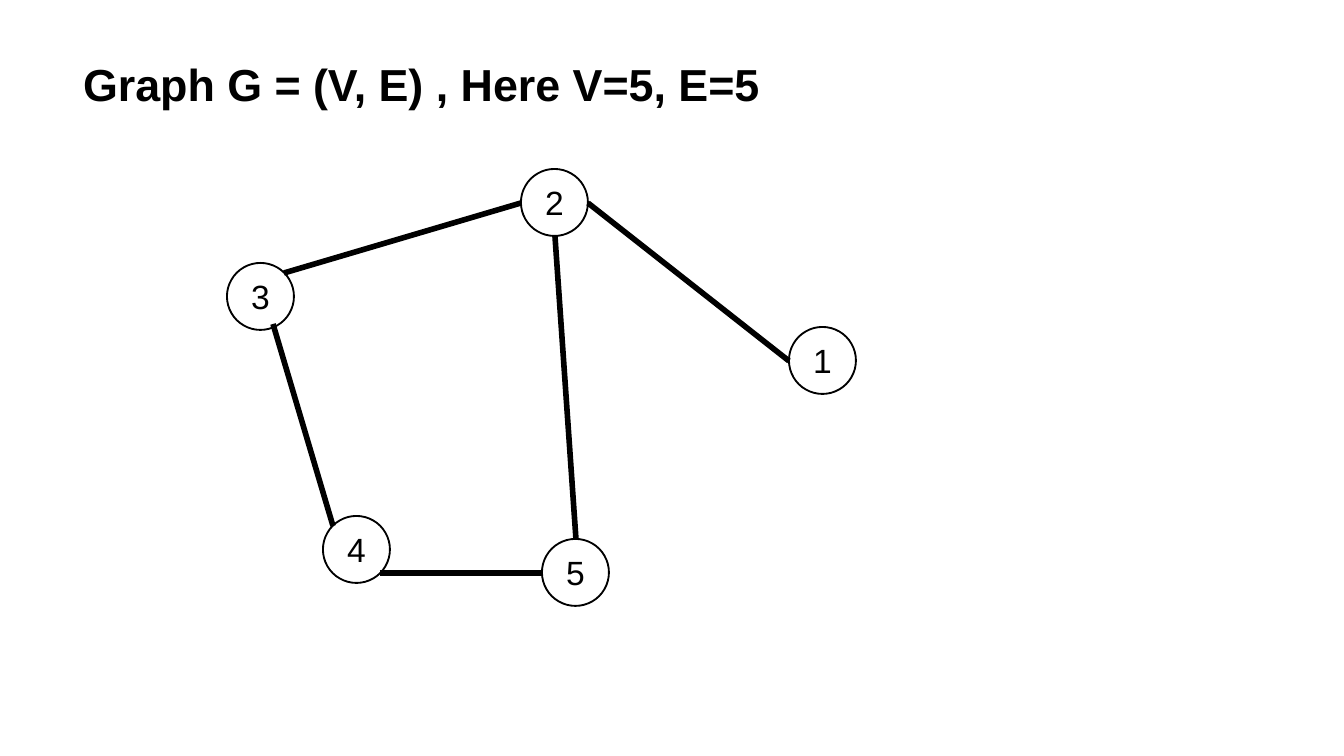
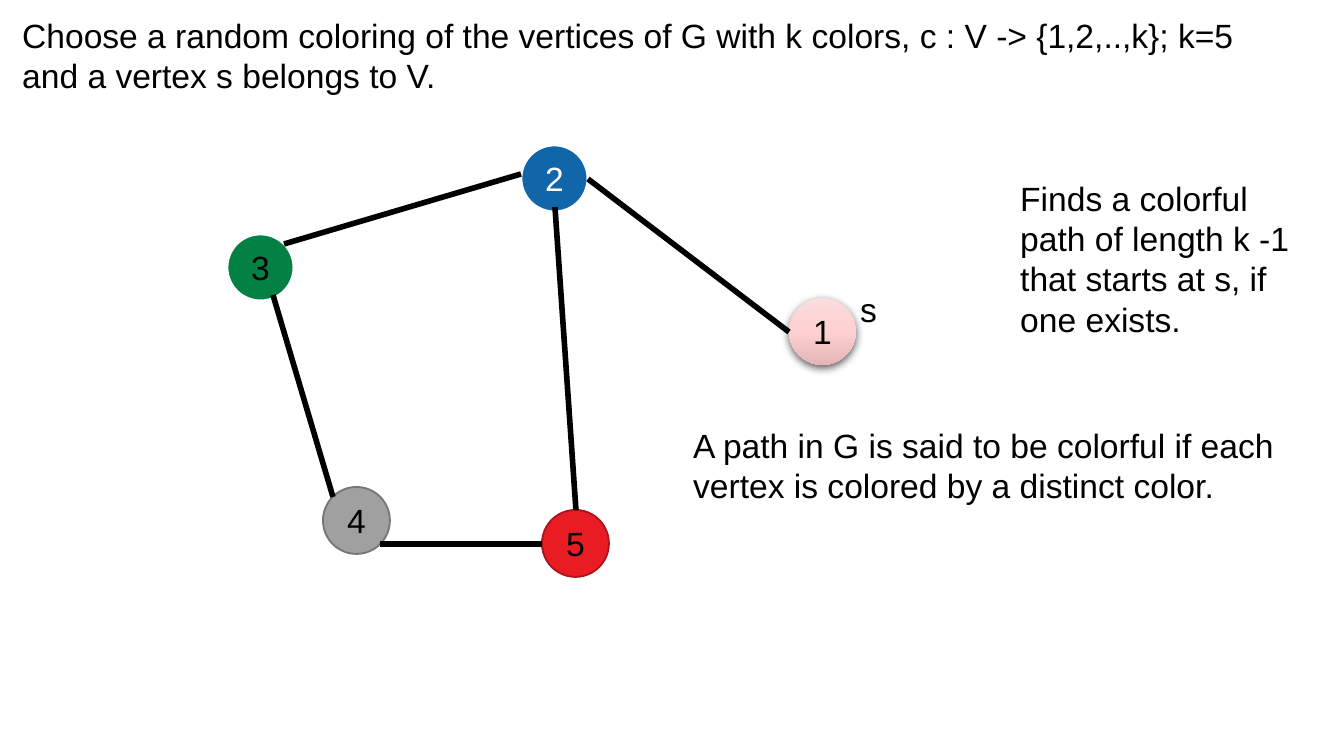
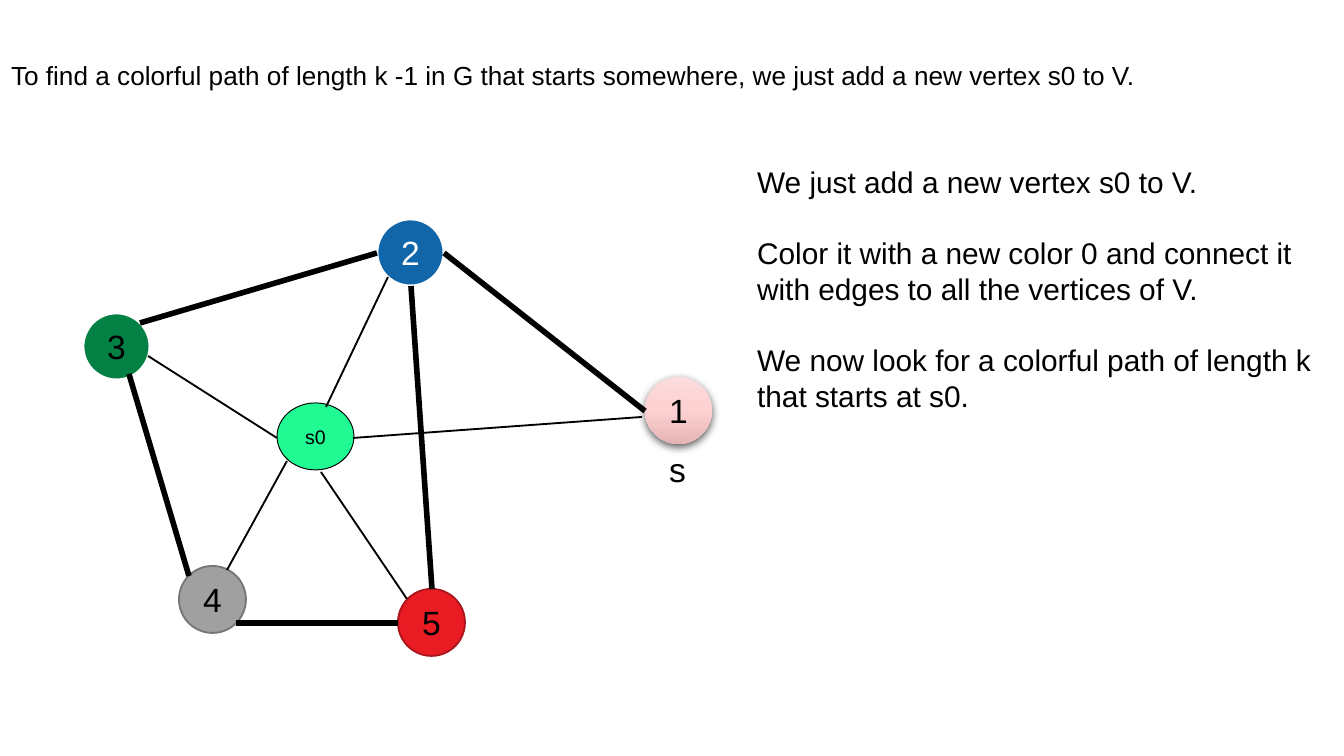
from copy import deepcopy

from pptx import Presentation
from pptx.dml.color import RGBColor as RGB
from pptx.enum.shapes import MSO_CONNECTOR as LINK, MSO_SHAPE as SHAPE
from pptx.enum.text import MSO_ANCHOR as ANCHOR, MSO_AUTO_SIZE as FIT, PP_ALIGN as ALIGN
from pptx.oxml import parse_xml
from pptx.oxml.ns import nsdecls
from pptx.util import Pt

# Shared scale, font and colours
PX = 914400 / 134.4
WIDE, HIGH = 1344, 756
FONT = "Arial"
BLACK, WHITE = "000000", "FFFFFF"
TITLE_ONLY, BLANK = 5, 6

# Vertex styles: fill, line, line width, text
PLAIN = {name: (WHITE, BLACK, 1, BLACK) for name in "45321"}
PINK = ("FCDCDD", "FDD0D1", "E5B5B6")
TINTS = {
    "4": ("A0A0A0", "767676", 1, BLACK),
    "5": ("E91C24", "AC151B", 1, BLACK),
    "3": ("038044", WHITE, 1.5, BLACK),
    "2": ("1166AA", WHITE, 1.5, WHITE),
    "1": (PINK, None, 0, BLACK),
}
HUB = ("21FA92", BLACK, 0.5, BLACK)

# Graph layout, relative to the graph's corner
SIZE = 67
SPOTS = {"4": (96, 347), "5": (315, 370), "3": (0, 94), "2": (294, 0), "1": (562, 158)}
SITES = {
    "top": (34, 0), "left": (0, 34), "right": (67, 34), "bottom": (34, 67),
    "top left": (10, 10), "top right": (57, 10), "bottom right": (57, 57),
    "low": (46, 61),
}
EDGES = [
    ("3", "top right", "2", "left"),
    ("3", "low", "4", "top left"),
    ("4", "bottom right", "5", "left"),
    ("5", "top", "2", "bottom"),
    ("1", "left", "2", "right"),
]
SPOKES = [
    (559, 198, 270, 219),
    (305, 58, 243, 188),
    (324, 380, 238, 253),
    (204, 242, 144, 351),
    (194, 219, 65, 137),
]


def emu(*sizes):
    return [round(size * PX) for size in sizes]


def color(code):
    return RGB.from_string(code)


def style(frame, size, tint=BLACK, bold=False):
    for par in frame.paragraphs:
        for run in par.runs:
            font = run.font
            font.name, font.size, font.bold = FONT, Pt(size), bold
            font.color.rgb = color(tint)


def title(slide, box, text, size, bold=False):
    head = slide.shapes.title
    head.left, head.top, head.width, head.height = emu(*box)
    frame = head.text_frame
    frame.text = text
    frame.word_wrap, frame.auto_size = True, FIT.NONE
    frame.vertical_anchor = ANCHOR.TOP
    frame.margin_left = frame.margin_right = frame.margin_top = frame.margin_bottom = 0
    par = frame.paragraphs[0]
    par.alignment, par.line_spacing = ALIGN.LEFT, 0.9
    style(frame, size, bold=bold)


def note(slide, box, text, size=18, gap=0, wrap=True):
    frame = slide.shapes.add_textbox(*emu(*box)).text_frame
    frame.text = text
    frame.word_wrap = wrap
    for par in frame.paragraphs[1:]:
        par.space_before = Pt(gap)
    style(frame, size)


def line(slide, ends, width):
    link = slide.shapes.add_connector(LINK.STRAIGHT, *emu(*ends))
    link.line.color.rgb, link.line.width = color(BLACK), Pt(width)
    link._element.spPr.append(parse_xml(f"<a:effectLst {nsdecls('a')}/>"))


def shade(shape, tints):
    """Fill from top to bottom with three tints and add a soft shadow."""
    fill = shape.fill
    fill.gradient()
    fill.gradient_angle = 270
    first = shape._element.spPr.gradFill.gsLst[0]
    first.addnext(deepcopy(first))
    for stop, tint, place in zip(fill.gradient_stops, tints, (0, 0.5, 1)):
        stop.color.rgb, stop.position = color(tint), place
    shape._element.spPr.effectLst.append(parse_xml(
        f'<a:outerShdw {nsdecls("a")} blurRad="{Pt(4.5)}" dist="{Pt(1.5)}" dir="5400000"'
        ' rotWithShape="0"><a:srgbClr val="000000"><a:alpha val="63000"/></a:srgbClr>'
        '</a:outerShdw>'))


def vertex(slide, box, name, look, size=18):
    fill, edge, width, tint = look
    disc = slide.shapes.add_shape(SHAPE.FLOWCHART_CONNECTOR, *emu(*box))
    disc.shadow.inherit = False
    if isinstance(fill, tuple):
        shade(disc, fill)
    else:
        disc.fill.solid()
        disc.fill.fore_color.rgb = color(fill)
    if edge:
        disc.line.color.rgb, disc.line.width = color(edge), Pt(width)
    else:
        disc.line.fill.background()
    frame = disc.text_frame
    frame.text = name
    frame.vertical_anchor = ANCHOR.MIDDLE
    frame.paragraphs[0].alignment = ALIGN.CENTER
    style(frame, size, tint)


def graph(slide, left, top, looks, drop=0):
    """Draw the five vertices and edges; drop lowers vertex 2 and its edge to 1."""
    for name, look in looks.items():
        x, y = SPOTS[name]
        fall = drop if name == "2" else 0
        vertex(slide, (left + x, top + y + fall, SIZE, SIZE), name, look)

    def point(name, site):
        (x, y), (dx, dy) = SPOTS[name], SITES[site]
        fall = drop if (name, site) == ("2", "right") else 0
        return left + x + dx, top + y + dy + fall

    for start, site, end, goal in EDGES:
        line(slide, point(start, site) + point(end, goal), 3)


def hub(slide, left, top):
    """Draw the new vertex and its edges to all the others."""
    vertex(slide, (left + 194, top + 184, 77, SIZE), "s0", HUB, 10.5)
    for x1, y1, x2, y2 in SPOKES:
        line(slide, (left + x1, top + y1, left + x2, top + y2), 1)


def plain_slide(slide):
    title(slide, (83, 63, 1184, 106), "Graph G = (V, E) , Here V=5, E=5", 24, True)
    graph(slide, 227, 169, PLAIN)


def color_slide(slide):
    graph(slide, 227, 140, TINTS, drop=5)
    note(slide, (9, 8, 1335, 136),
         "Choose a random coloring of the vertices of G with k colors, "
         "c : V -> {1,2,..,k}; k=5\nand a vertex s belongs to V.")
    note(slide, (847, 282, 62, 39), "s")
    note(slide, (1007, 171, 317, 175),
         "Finds a colorful path of length k -1 that starts at s, if\none exists.")
    note(slide, (680, 418, 681, 95),
         "A path in G is said to be colorful if each vertex is colored by a distinct color.")


def hub_slide(slide):
    title(slide, (11, 63, 1325, 106),
          "To find a colorful path of length k -1 in G that starts somewhere, "
          "we just add a new vertex s0 to V.", 14)
    graph(slide, 83, 219, TINTS)
    hub(slide, 83, 219)
    note(slide, (656, 442, 44, 54), "s", wrap=False)
    note(slide, (744, 157, 585, 267),
         "We just add a new vertex s0 to V.\n"
         "Color it with a new color 0 and connect it with edges to all the vertices of V.\n"
         "We now look for a colorful path of length k that starts at s0.", 16, gap=19)


def main():
    deck = Presentation()
    deck.slide_width, deck.slide_height = emu(WIDE, HIGH)
    pages = [(plain_slide, TITLE_ONLY), (color_slide, BLANK), (hub_slide, TITLE_ONLY)]
    for build, layout in pages:
        build(deck.slides.add_slide(deck.slide_layouts[layout]))
    deck.save("out.pptx")


if __name__ == "__main__":
    main()
